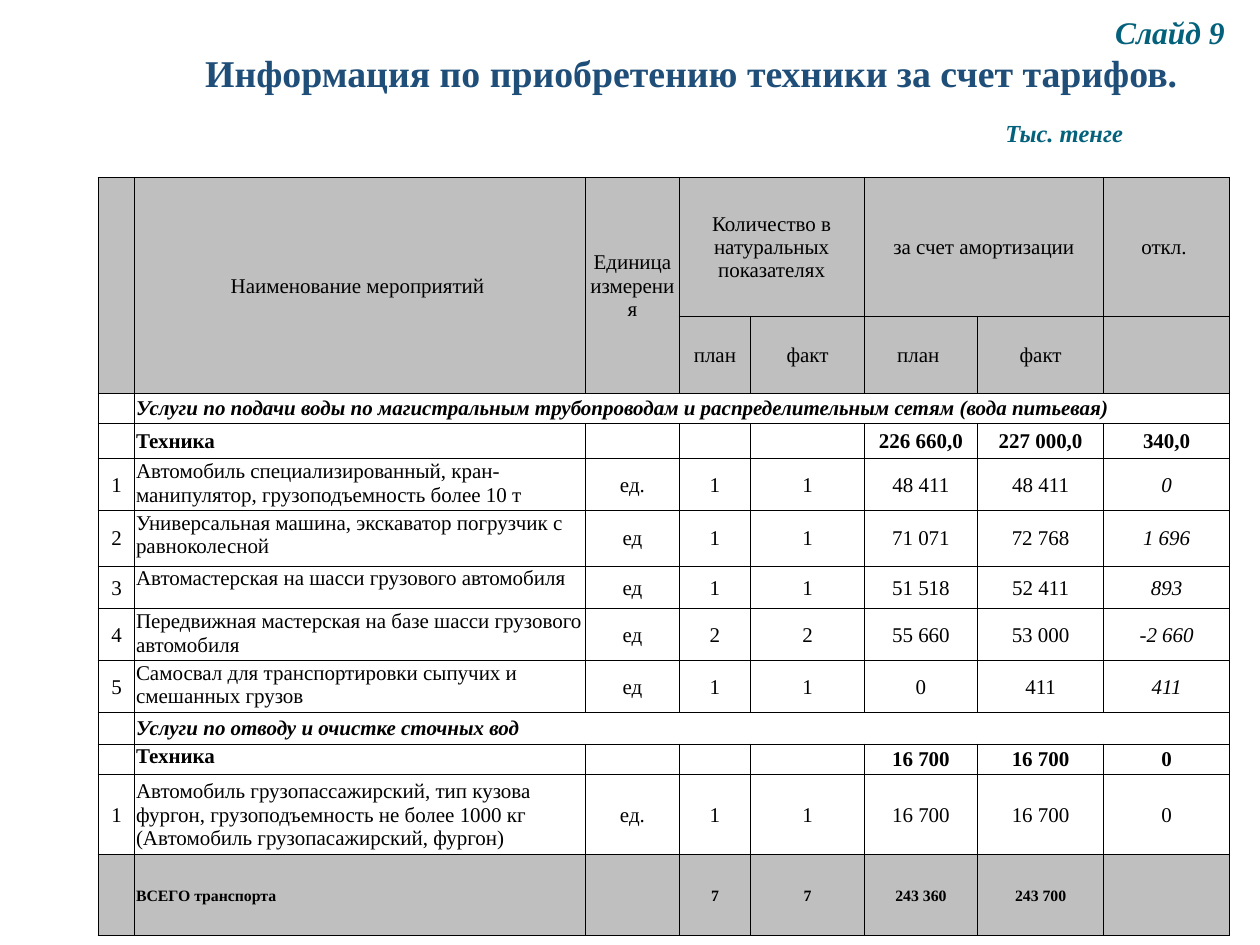
from pptx import Presentation
from pptx.dml.color import RGBColor
from pptx.enum.text import MSO_ANCHOR as Anchor, PP_ALIGN as Align
from pptx.oxml.xmlchemy import OxmlElement as Element
from pptx.util import Inches, Pt

BLACK = RGBColor(0x00, 0x00, 0x00)
WHITE = RGBColor(0xFF, 0xFF, 0xFF)
GREY = RGBColor(0xBF, 0xBF, 0xBF)
NAVY = RGBColor(0x1F, 0x4E, 0x79)
TEAL = RGBColor(0x04, 0x61, 0x7B)

COLUMNS = [0.29, 3.58, 0.74, 0.57, 0.9, 0.9, 1, 1]
HEIGHTS = [1.1, 0.56, 0.24, 0.28, 0.39, 0.44, 0.34, 0.38, 0.38, 0.25, 0.24, 0.64, 0.64]

# Row kinds: head, section (name spans the row), group, item, total
ROWS = [
    ("head", ["", "Наименование мероприятий ", "Единица измерения",
              "Количество в натуральных показателях", "", "за счет амортизации", "", "откл. "]),
    ("head", ["", "", "", "план", "факт", "план ", "факт", ""]),
    ("section", ["", "Услуги по подачи воды по магистральным трубопроводам "
                     "и распределительным сетям (вода питьевая)"]),
    ("group", ["", "Техника", "", "", "", "226 660,0", "227 000,0", "340,0"]),
    ("item", ["1", "Автомобиль специализированный, кран-манипулятор, "
                   "грузоподъемность более 10 т", "ед.", "1", "1", "48 411", "48 411", "0"]),
    ("item", ["2", "Универсальная машина, экскаватор погрузчик с равноколесной",
              "ед", "1", "1", "71 071", "72 768", "1 696"]),
    ("item", ["3", "Автомастерская на шасси грузового автомобиля",
              "ед", "1", "1", "51 518", "52 411", "893"]),
    ("item", ["4", "Передвижная мастерская на базе шасси грузового автомобиля",
              "ед", "2", "2", "55 660", "53 000", "-2 660"]),
    ("item", ["5", "Самосвал для транспортировки сыпучих и смешанных грузов",
              "ед", "1", "1", "0", "411", "411"]),
    ("section", ["", "Услуги по отводу и очистке сточных вод"]),
    ("group", ["", "Техника", "", "", "", "16 700", "16 700", "0"]),
    ("item", ["1", "Автомобиль грузопассажирский, тип кузова фургон, грузоподъемность "
                   "не более 1000 кг (Автомобиль грузопасажирский, фургон)",
              "ед.", "1", "1", "16 700", "16 700", "0"]),
    ("total", ["", "ВСЕГО транспорта", "", "7", "7", "243 360", "243 700", ""]),
]
HEAD_MERGES = [(0, 0, 1, 0), (0, 1, 1, 1), (0, 2, 1, 2), (0, 3, 0, 4), (0, 5, 0, 6)]
TOP_NAMES = {4, 5, 6, 7, 8, 10}  # rows whose name sits at the top of the cell
UPRIGHT_ROW = 11                 # item row whose deviation is not italic


class SlideBuilder:
    """Holds the deck, the current page and the shared style."""

    font_name = "Times New Roman"
    grid_columns, grid_rows = 100, 75

    def __init__(self, width, height):
        self.deck = Presentation()
        self.deck.slide_width, self.deck.slide_height = Inches(width), Inches(height)
        self.page = self.deck.slides.add_slide(self.deck.slide_layouts[5])

    def area(self, left, top, width, height):
        """Turn grid columns and rows into lengths."""
        wide = self.deck.slide_width / self.grid_columns
        high = self.deck.slide_height / self.grid_rows
        return int(left * wide), int(top * high), int(width * wide), int(height * high)

    def style(self, para, size, color=BLACK, bold=False, italic=False, align=Align.LEFT):
        para.alignment = align
        font = para.font
        font.name, font.size, font.bold, font.italic = self.font_name, Pt(size), bold, italic
        font.color.rgb = color

    def fill_frame(self, box, text, size, color, align, italic=False):
        frame = box.text_frame
        frame.word_wrap = True
        frame.vertical_anchor = Anchor.MIDDLE
        frame.margin_left = frame.margin_right = Inches(0.07)
        frame.margin_top = frame.margin_bottom = Inches(0.04)
        para = frame.paragraphs[0]
        para.text = text
        para.line_spacing = 0.9
        self.style(para, size, color, True, italic, align)

    def title(self, text, *place):
        box = self.page.shapes.title
        box.left, box.top, box.width, box.height = self.area(*place)
        self.fill_frame(box, text, 21.6, NAVY, Align.CENTER)

    def label(self, text, size, *place):
        box = self.page.shapes.add_textbox(*self.area(*place))
        self.fill_frame(box, text, size, TEAL, Align.JUSTIFY, italic=True)

    def border(self, cell, widths):
        """Draw the left, right, top and bottom lines, in that order."""
        props = cell._tc.get_or_add_tcPr()
        for index, (side, points) in enumerate(zip("LRTB", widths)):
            line = Element(f"a:ln{side}")
            line.set("w", str(Pt(points)))
            fill, color = Element("a:solidFill"), Element("a:srgbClr")
            color.set("val", str(BLACK))
            fill.append(color)
            line.append(fill)
            props.insert(index, line)

    def cell(self, cell, text, fill, anchor, **style):
        cell.margin_left = cell.margin_right = cell.margin_top = Inches(0.01)
        cell.margin_bottom = Pt(0.1)  # a zero margin falls back to the default
        cell.vertical_anchor = anchor
        cell.fill.solid()
        cell.fill.fore_color.rgb = fill
        para = cell.text_frame.paragraphs[0]
        if text:
            para.text = text
        self.style(para, **style)

    def table(self, rows, columns, heights, *place):
        table = self.page.shapes.add_table(len(rows), len(columns), *self.area(*place)).table
        table.first_row = table.horz_banding = False
        for column, width in zip(table.columns, columns):
            column.width = Inches(width)
        for row, height in zip(table.rows, heights):
            row.height = Inches(height)

        last_row, last_col = len(rows) - 1, len(columns) - 1
        for r, (kind, texts) in enumerate(rows):
            for c in range(len(columns)):
                cell = table.cell(r, c)
                is_name = c == 1 and kind != "head"
                self.cell(
                    cell, texts[c] if c < len(texts) else "",
                    fill=GREY if kind in ("head", "total") else WHITE,
                    anchor=Anchor.TOP if is_name and r in TOP_NAMES else Anchor.MIDDLE,
                    size=9 if kind == "total" else 12,
                    bold=kind in ("section", "group", "total"),
                    italic=kind == "section"
                    or (kind == "item" and c == last_col and r != UPRIGHT_ROW),
                    align=Align.LEFT if is_name else Align.CENTER)
                at_right = c == last_col or (kind == "section" and c == 1)
                edges = (c == 0, at_right, r == 0, r == last_row)
                self.border(cell, [1 if outer else 0.5 for outer in edges])

        sections = [(r, 1, r, last_col) for r, (kind, _) in enumerate(rows) if kind == "section"]
        for top, left, bottom, right in HEAD_MERGES + sections:
            table.cell(top, left).merge(table.cell(bottom, right))


def main():
    slide = SlideBuilder(10, 7.5)
    # Heading and unit of measure
    slide.title("Информация по приобретению техники за счет тарифов. ", 11.5, 4.4, 87.5, 3.1)
    slide.label("Тыс. тенге", 14, 79.1, 7.1, 15.9, 7.1)
    # Purchases table
    slide.table(ROWS, COLUMNS, HEIGHTS, 7.8, 14.1, 89.8, 58.8)
    # Slide number
    slide.label("Слайд 9", 18, 87.8, 1.5, 12.2, 2.4)
    slide.deck.save("out.pptx")


if __name__ == "__main__":
    main()
